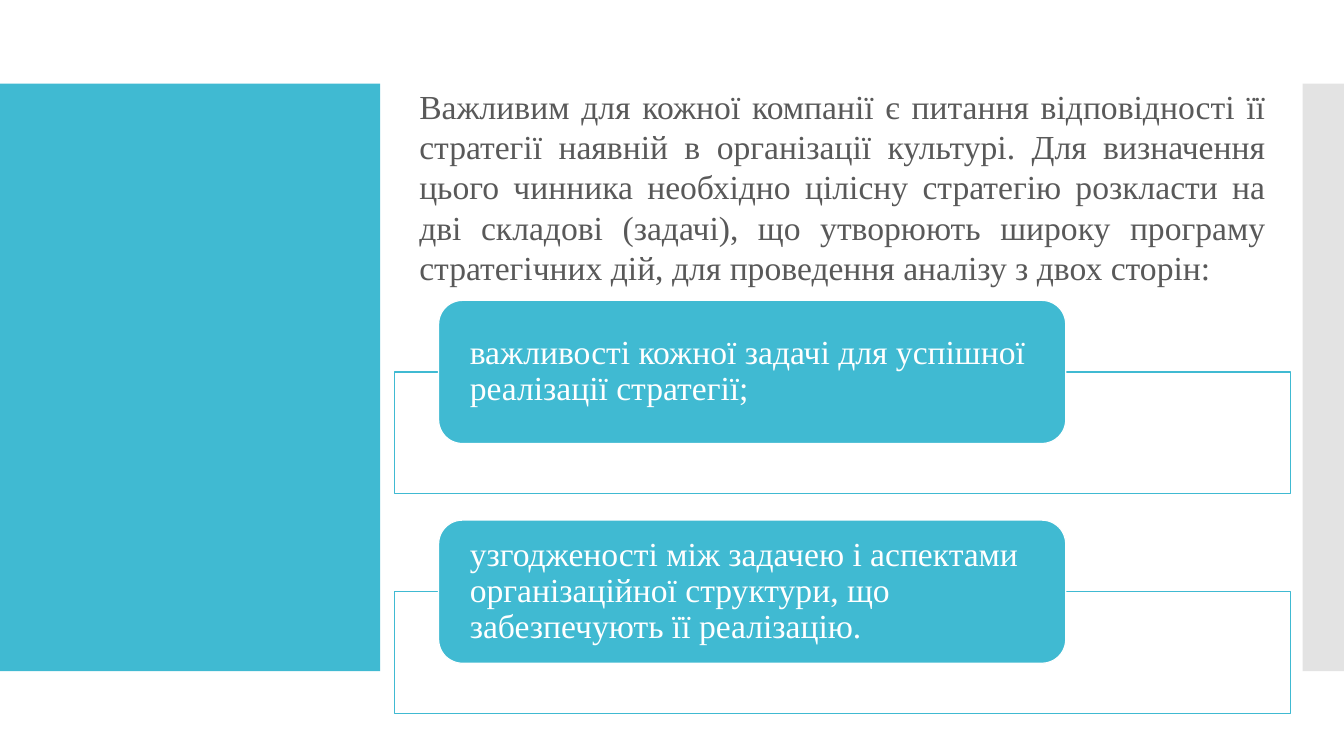
"""Build a slide on matching a company's strategy with its culture."""
import pptx
import pptx.dml.color
import pptx.enum.shapes
import pptx.enum.text
import pptx.oxml
import pptx.oxml.ns
import pptx.util

INTRO = (
    "Важливим для кожної компанії є питання відповідності її стратегії наявній "
    "в організації культурі. Для визначення цього чинника необхідно цілісну "
    "стратегію розкласти на дві складові (задачі), що утворюють широку програму "
    "стратегічних дій, для проведення аналізу з двох сторін:"
)
SIDES = [
    "важливості кожної задачі для успішної реалізації стратегії;",
    "узгодженості між задачею і аспектами організаційної структури, "
    "що забезпечують її реалізацію.",
]
COLOURS = {"teal": "40BAD2", "grey": "C8C8C8", "white": "FFFFFF", "text": "595959"}
BANDS = [(0, 3.77, "teal", 100), (12.92, 0.41, "grey", 50)]
FIRST_TOP, STEP = 2.98, 2.18

Inches = pptx.util.Inches
Kind = pptx.enum.shapes.MSO_SHAPE
Align = pptx.enum.text.PP_ALIGN
Anchor = pptx.enum.text.MSO_ANCHOR


def colour(name):
    return pptx.dml.color.RGBColor.from_string(COLOURS[name])


def add_block(page, kind, place, fill, opacity=100, line=None):
    block = page.shapes.add_shape(kind, *map(Inches, place))
    block.shadow.inherit = False
    block.fill.solid()
    block.fill.fore_color.rgb = colour(fill)
    if opacity < 100:
        tint = block.fill._xPr.find(".//" + pptx.oxml.ns.qn("a:srgbClr"))
        alpha = pptx.oxml.parse_xml(
            f'<a:alpha {pptx.oxml.ns.nsdecls("a")} val="{opacity * 1000}"/>')
        tint.append(alpha)
    if line:
        block.line.color.rgb = colour(line)
        block.line.width = pptx.util.Pt(0.85)
    else:
        block.line.fill.background()
    return block


def write(box, text, ink, frame_format, para_format):
    frame = box.text_frame
    for name, value in {"word_wrap": True, **frame_format}.items():
        setattr(frame, name, value)
    para = frame.paragraphs[0]
    for name, value in para_format.items():
        setattr(para, name, value)
    span = para.add_run()
    span.text = text
    for name, value in {"name": "Times New Roman", "size": pptx.util.Pt(24)}.items():
        setattr(span.font, name, value)
    span.font.color.rgb = colour(ink)


def main():
    deck = pptx.Presentation()
    deck.slide_width, deck.slide_height = Inches(13.33), Inches(7.5)
    page = deck.slides.add_slide(deck.slide_layouts[6])

    for left, width, fill, opacity in BANDS:
        add_block(page, Kind.RECTANGLE, (left, 0.83, width, 5.83), fill, opacity)

    intro = page.shapes.add_textbox(*map(Inches, (4.06, 0.8, 8.59, 2.1)))
    write(intro, INTRO, "text", {"vertical_anchor": Anchor.TOP},
          {"alignment": Align.JUSTIFY})

    for index, side in enumerate(SIDES):
        top = FIRST_TOP + index * STEP
        add_block(page, Kind.RECTANGLE, (3.91, top + 0.71, 8.89, 1.21),
                  "white", 90, "teal")
        card = add_block(page, Kind.ROUNDED_RECTANGLE, (4.35, top, 6.22, 1.42),
                         "teal", line="white")
        write(card, side, "white",
              {"vertical_anchor": Anchor.MIDDLE,
               "margin_left": Inches(0.24), "margin_right": Inches(0.24),
               "margin_top": 0, "margin_bottom": 0},
              {"alignment": Align.LEFT, "line_spacing": 0.9})

    deck.save("out.pptx")


if __name__ == "__main__":
    main()
